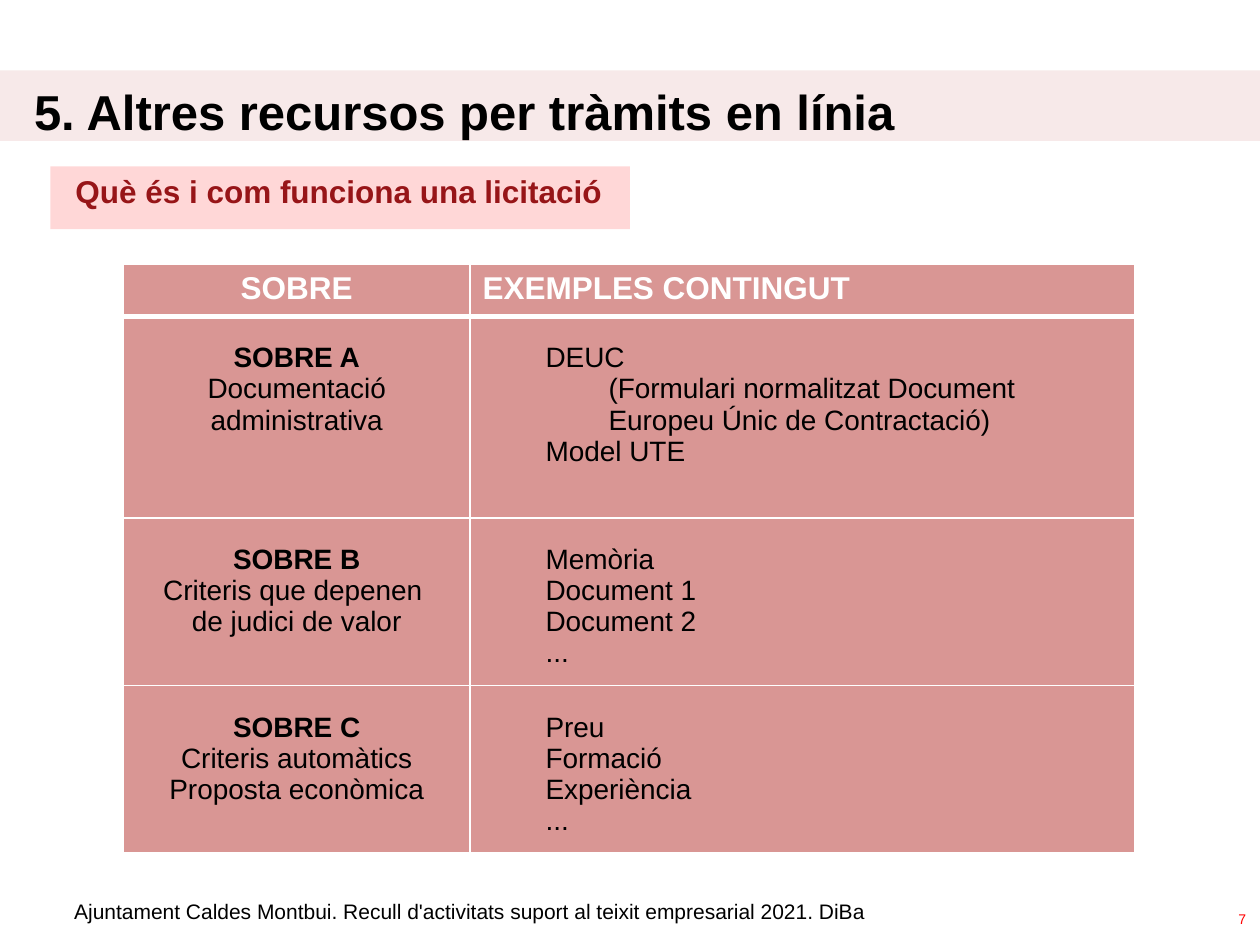
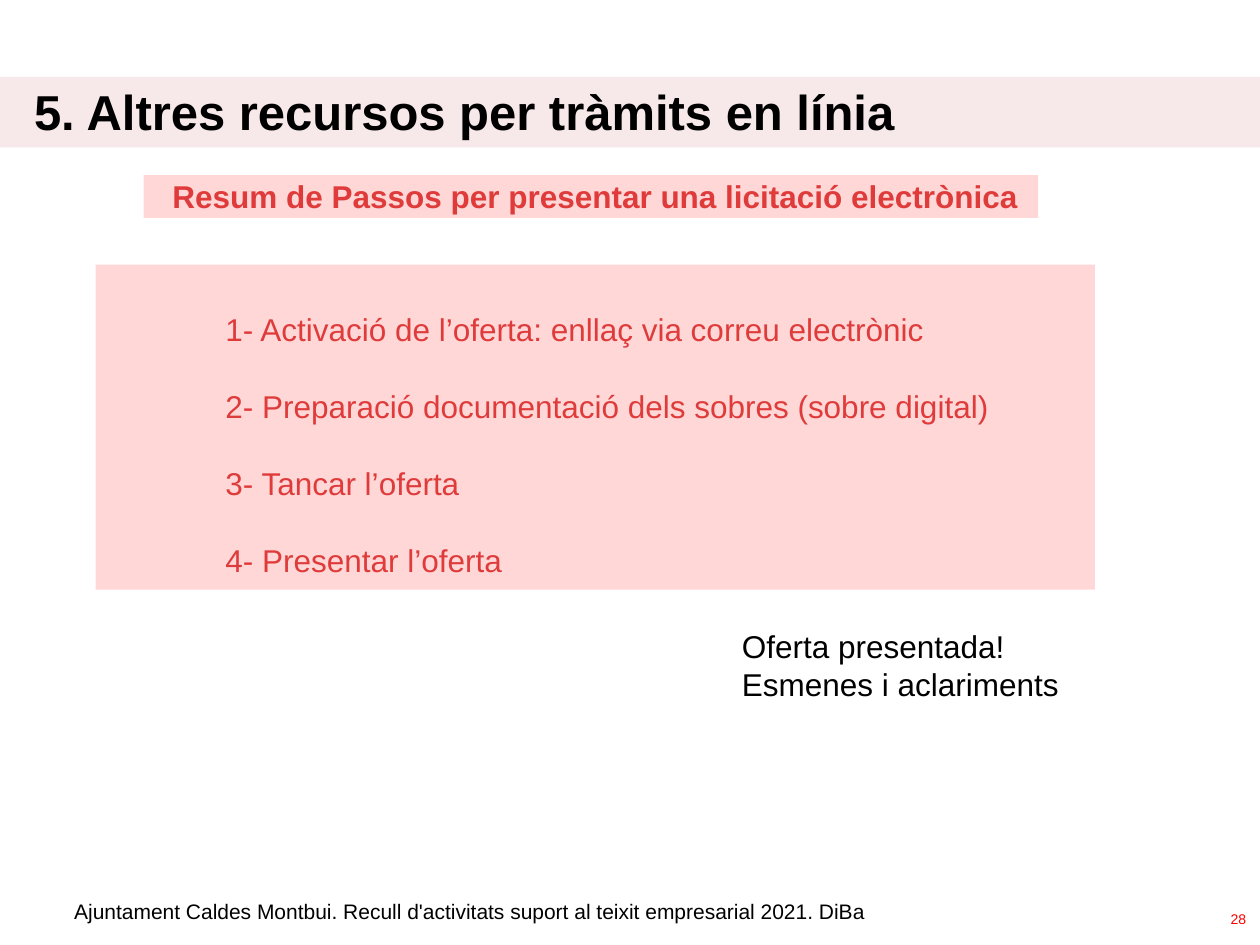
import pptx
import pptx.dml.color
import pptx.enum.shapes
import pptx.enum.text
import pptx.oxml
import pptx.oxml.ns
import pptx.util
from lxml import etree

Inches = pptx.util.Inches
RGBColor = pptx.dml.color.RGBColor
Align = pptx.enum.text.PP_ALIGN
Anchor = pptx.enum.text.MSO_ANCHOR

BLACK = RGBColor(0x00, 0x00, 0x00)
WHITE = RGBColor(0xFF, 0xFF, 0xFF)
RED = RGBColor(0xCC, 0x00, 0x00)
DARK_RED = RGBColor(0x97, 0x15, 0x18)
NUMBER_RED = RGBColor(0xFF, 0x00, 0x00)
BAND_PINK = RGBColor(0xE6, 0xB9, 0xB8)
PANEL_PINK = RGBColor(0xFF, 0x99, 0x99)
TABLE_PINK = RGBColor(0xD9, 0x96, 0x94)

FONT = "Arial"
TITLE = "5. Altres recursos per tràmits en línia"
FOOTER = "Ajuntament Caldes Montbui. Recull d'activitats suport al teixit empresarial 2021. DiBa"


def write_text(frame, text, size=18, color=BLACK, bold=False, align=Align.LEFT,
               indents=(), bold_first=False, gap=0, anchor=Anchor.TOP, wrap=True):
    """Write one paragraph per line of text; indents gives the left margin of each, in inches."""
    frame.word_wrap = wrap
    frame.auto_size = pptx.enum.text.MSO_AUTO_SIZE.NONE
    frame.vertical_anchor = anchor
    for index, line in enumerate(text.split("\n")):
        paragraph = frame.add_paragraph() if index else frame.paragraphs[0]
        if indents:
            paragraph._p.get_or_add_pPr().set("marL", str(Inches(indents[index])))
        paragraph.alignment = align
        paragraph.space_before = pptx.util.Pt(gap if index else 0)
        run = paragraph.add_run()
        run.text = line
        run.font.name = FONT
        run.font.size = pptx.util.Pt(size)
        run.font.bold = bold or (bold_first and index == 0)
        run.font.color.rgb = color


def add_panel(slide, left, top, width, height, color, opacity):
    """Add a borderless, translucent rectangle."""
    panel = slide.shapes.add_shape(
        pptx.enum.shapes.MSO_SHAPE.RECTANGLE,
        Inches(left), Inches(top), Inches(width), Inches(height))
    panel.shadow.inherit = False
    panel.fill.solid()
    panel.fill.fore_color.rgb = color
    panel.line.fill.background()
    color_element = panel._element.spPr.find(".//" + pptx.oxml.ns.qn("a:srgbClr"))
    etree.SubElement(color_element, pptx.oxml.ns.qn("a:alpha"), val=str(opacity * 1000))
    return panel


presentation = pptx.Presentation()
presentation.slide_width = Inches(10)
presentation.slide_height = Inches(7.5)

# Shared frame: band, title, footer and page number
slides = []
for number, band_left, band_top, band_width in [("7", 0, 0.56, 10), ("28", -0.06, 0.61, 10.12)]:
    slide = presentation.slides.add_slide(presentation.slide_layouts[5])
    band = add_panel(slide, band_left, band_top, band_width, 0.56, BAND_PINK, 31)
    title = slide.shapes.title
    title._element.addprevious(band._element)
    title.left, title.top = Inches(0.17), Inches(0.6)
    title.width, title.height = Inches(10), Inches(0.57)
    write_text(title.text_frame, TITLE, size=28, bold=True)
    footer = slide.shapes.add_textbox(Inches(0.49), Inches(7.08), Inches(6.61), Inches(0.3))
    write_text(footer.text_frame, FOOTER, size=12)
    page = slide.shapes.add_textbox(Inches(8.76), Inches(7.09), Inches(1.23), Inches(0.4))
    write_text(page.text_frame, number, size=8, color=NUMBER_RED,
               align=Align.RIGHT, anchor=Anchor.MIDDLE)
    slides.append(slide)
envelope_slide, steps_slide = slides

# Envelopes and what they contain
add_panel(envelope_slide, 0.4, 1.32, 4.6, 0.5, PANEL_PINK, 39)
subtitle = envelope_slide.shapes.add_textbox(Inches(0), Inches(1.32), Inches(5.31), Inches(0.4))
write_text(subtitle.text_frame, "Què és i com funciona una licitació",
           color=DARK_RED, bold=True, indents=[0.5])

envelopes = [
    ("SOBRE A\nDocumentació administrativa",
     "DEUC\n(Formulari normalitzat Document Europeu Únic de Contractació)\nModel UTE",
     [0.5, 1, 0.5]),
    ("SOBRE B\nCriteris que depenen \nde judici de valor",
     "Memòria\nDocument 1\nDocument 2\n...", [0.5] * 4),
    ("SOBRE C\nCriteris automàtics\nProposta econòmica",
     "Preu\nFormació\nExperiència\n...", [0.5] * 4),
]
table = envelope_slide.shapes.add_table(
    4, 2, Inches(0.98), Inches(2.1), Inches(8.03), Inches(4.67)).table
for column, width in zip(table.columns, [2.75, 5.28]):
    column.width = Inches(width)
for row, height in zip(table.rows, [0.41, 1.6, 1.33, 1.33]):
    row.height = Inches(height)

write_text(table.cell(0, 0).text_frame, "SOBRE", color=WHITE, bold=True, align=Align.CENTER)
write_text(table.cell(0, 1).text_frame, "EXEMPLES CONTINGUT", color=WHITE, bold=True)
for row_index, (envelope, contents, indents) in enumerate(envelopes, start=1):
    envelope_cell, contents_cell = table.rows[row_index].cells
    envelope_cell.margin_top = contents_cell.margin_top = Inches(0.21)
    write_text(envelope_cell.text_frame, envelope, size=16, bold_first=True, align=Align.CENTER)
    write_text(contents_cell.text_frame, contents, size=16, indents=indents)

for row_index, row in enumerate(table.rows):
    for cell in row.cells:
        properties = cell._tc.get_or_add_tcPr()
        for side in "LRTB":
            under_header = (row_index, side) in [(0, "B"), (1, "T")]
            line_width = pptx.util.Pt(3 if under_header else 1)
            properties.append(pptx.oxml.parse_xml(
                f'<a:ln{side} {pptx.oxml.ns.nsdecls("a")} w="{line_width}">'
                f'<a:solidFill><a:srgbClr val="{WHITE}"/></a:solidFill></a:ln{side}>'))
        cell.fill.solid()
        cell.fill.fore_color.rgb = TABLE_PINK

# Steps of an electronic tender; the panels tint the text beneath them
steps = steps_slide.shapes.add_textbox(Inches(1.69), Inches(2.41), Inches(6.32), Inches(2.22))
write_text(steps.text_frame,
           "1- Activació de l’oferta: enllaç via correu electrònic\n"
           "2- Preparació documentació dels sobres (sobre digital)\n"
           "3- Tancar l’oferta\n"
           "4- Presentar l’oferta",
           color=RED, gap=22.5, wrap=False)
result = steps_slide.shapes.add_textbox(Inches(5.79), Inches(4.93), Inches(2.74), Inches(0.71))
write_text(result.text_frame, "Oferta presentada!\nEsmenes i aclariments", wrap=False)
add_panel(steps_slide, 0.76, 2.1, 7.93, 2.58, PANEL_PINK, 39)
summary = steps_slide.shapes.add_textbox(Inches(1.27), Inches(1.36), Inches(6.98), Inches(0.4))
write_text(summary.text_frame, "Resum de Passos per presentar una licitació electrònica",
           color=RED, bold=True, wrap=False)
add_panel(steps_slide, 1.14, 1.39, 7.1, 0.34, PANEL_PINK, 39)

presentation.save("out.pptx")
